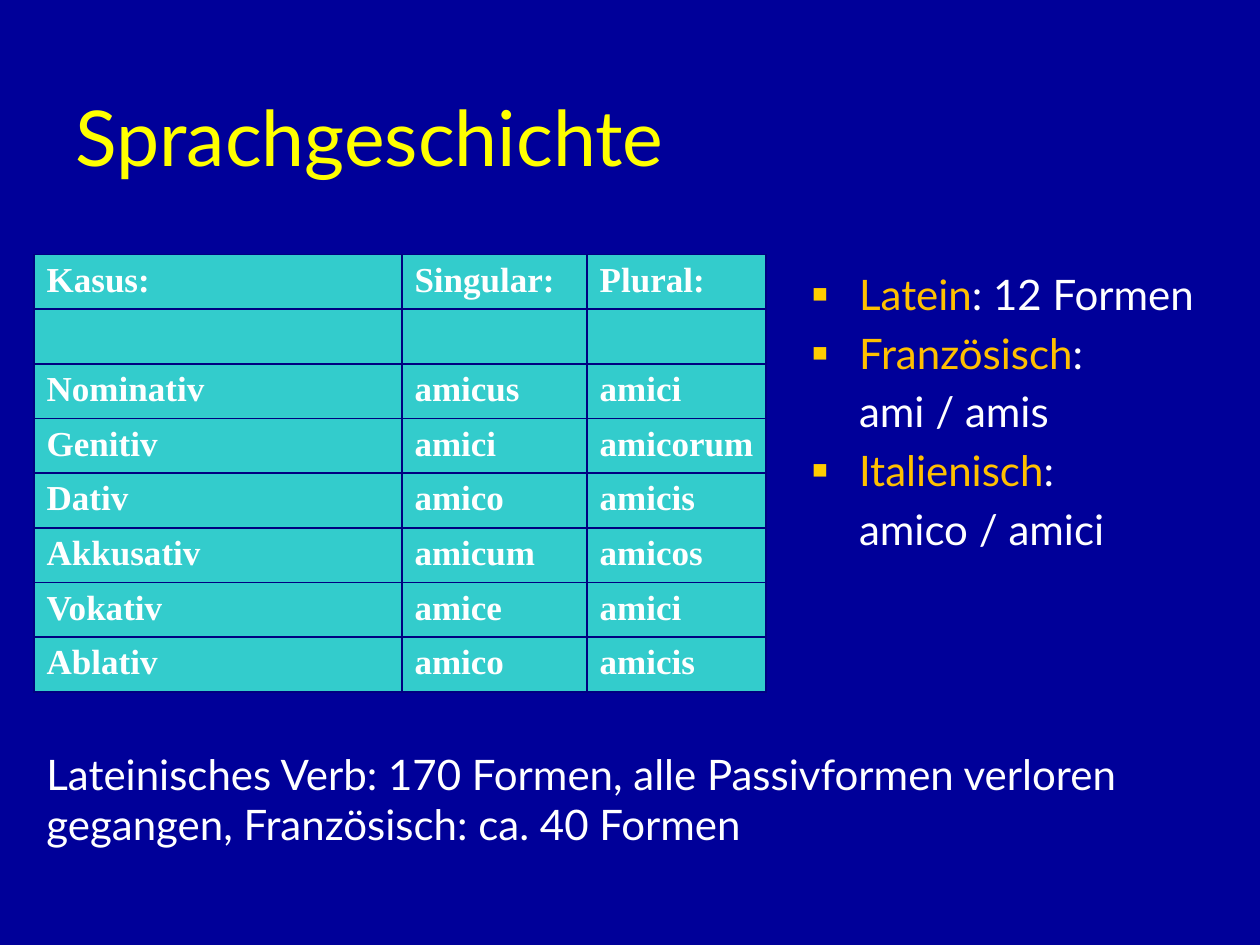
from dataclasses import dataclass

import pptx
import pptx.dml.color
import pptx.enum.text
import pptx.oxml.ns
import pptx.util
from lxml import etree

COLUMNS, ROWS = 100, 75


@dataclass(frozen=True)
class Theme:
    background: str = "000099"
    title: str = "FFFF00"
    text: str = "FFFFFF"
    language: str = "FFC000"
    bullet: str = "FFCC00"
    cell: str = "33CCCC"
    border: str = "000080"
    font: str = "Lato"
    table_font: str = "Times New Roman"
    bullet_font: str = "Times New Roman"
    title_size: int = 44
    text_size: int = 24
    table_size: int = 20
    border_width: int = 1


THEME = Theme()
HANGING_INDENT = pptx.util.Inches(0.38)
CELL_RIGHT_MARGIN = pptx.util.Inches(0.04)

DECLENSION = [
    ("Kasus:", "Singular:", "Plural:"),
    ("", "", ""),
    ("Nominativ", "amicus", "amici"),
    ("Genitiv", "amici", "amicorum"),
    ("Dativ", "amico", "amicis"),
    ("Akkusativ", "amicum", "amicos"),
    ("Vokativ", "amice", "amici"),
    ("Ablativ", "amico", "amicis"),
]
CASE_COLUMN_SHARES = (2.92, 1.47, 1.42)

# Language, what follows it on the line, and the forms on the next line
LANGUAGES = [
    ("Latein", ": 12 Formen", None),
    ("Französisch", ":", "ami / amis"),
    ("Italienisch", ":", "amico / amici"),
]
VERB_NOTE = ("Lateinisches Verb: 170 Formen, alle Passivformen verloren "
             "gegangen, Französisch: ca. 40 Formen")


def rgb(value):
    return pptx.dml.color.RGBColor.from_string(value)


def grid_box(presentation, left, top, width, height):
    """Turn grid columns and rows into slide lengths."""
    column = presentation.slide_width / COLUMNS
    row = presentation.slide_height / ROWS
    return (round(left * column), round(top * row),
            round(width * column), round(height * row))


def add_run(paragraph, text, color, size=THEME.text_size, font=THEME.font, bold=False):
    run = paragraph.add_run()
    run.text = text
    run.font.name = font
    run.font.size = pptx.util.Pt(size)
    run.font.bold = bold
    run.font.color.rgb = rgb(color)


def add_text_frame(slide, box):
    frame = slide.shapes.add_textbox(*box).text_frame
    frame.word_wrap = True
    return frame


def add_child(parent, tag, **attributes):
    child = etree.SubElement(parent, pptx.oxml.ns.qn(tag))
    for name, value in attributes.items():
        child.set(name, str(value))
    return child


def indent_paragraph(paragraph, bulleted):
    properties = paragraph._p.get_or_add_pPr()
    properties.set("marL", str(HANGING_INDENT))
    properties.set("indent", str(-HANGING_INDENT if bulleted else 0))
    if bulleted:
        color = add_child(properties, "a:buClr")
        add_child(color, "a:srgbClr", val=THEME.bullet)
        add_child(properties, "a:buSzPct", val=120000)
        add_child(properties, "a:buFont", typeface=THEME.bullet_font)
        add_child(properties, "a:buChar", char="▪")


def style_cell(cell):
    properties = cell._tc.get_or_add_tcPr()
    for side in ("a:lnL", "a:lnR", "a:lnT", "a:lnB"):
        line = add_child(properties, side, w=pptx.util.Pt(THEME.border_width))
        fill = add_child(line, "a:solidFill")
        add_child(fill, "a:srgbClr", val=THEME.border)
    cell.fill.solid()
    cell.fill.fore_color.rgb = rgb(THEME.cell)
    cell.margin_right = CELL_RIGHT_MARGIN


def add_title(slide, box):
    frame = add_text_frame(slide, box)
    frame.vertical_anchor = pptx.enum.text.MSO_ANCHOR.MIDDLE
    add_run(frame.paragraphs[0], "Sprachgeschichte", THEME.title, THEME.title_size)


def add_declension_table(slide, box):
    table = slide.shapes.add_table(len(DECLENSION), len(CASE_COLUMN_SHARES), *box).table
    table.first_row = table.horz_banding = False
    for column, share in zip(table.columns, CASE_COLUMN_SHARES):
        column.width = round(box[2] * share / sum(CASE_COLUMN_SHARES))
    for row, words in zip(table.rows, DECLENSION):
        row.height = round(box[3] / len(DECLENSION))
        for cell, word in zip(row.cells, words):
            style_cell(cell)
            if word:
                add_run(cell.text_frame.paragraphs[0], word, THEME.text,
                        THEME.table_size, THEME.table_font, bold=True)


def add_language_list(slide, box):
    frame = add_text_frame(slide, box)

    def next_paragraph(bulleted):
        paragraph = frame.paragraphs[0]
        if paragraph.runs:
            paragraph = frame.add_paragraph()
            paragraph.space_before = pptx.util.Pt(THEME.text_size * 0.2)
        indent_paragraph(paragraph, bulleted)
        return paragraph

    for language, remainder, forms in LANGUAGES:
        paragraph = next_paragraph(bulleted=True)
        add_run(paragraph, language, THEME.language)
        add_run(paragraph, remainder, THEME.text)
        if forms:
            add_run(next_paragraph(bulleted=False), forms, THEME.text)


def add_verb_note(slide, box):
    frame = add_text_frame(slide, box)
    add_run(frame.paragraphs[0], VERB_NOTE, THEME.text)


def main():
    presentation = pptx.Presentation()
    presentation.slide_width = pptx.util.Inches(10)
    presentation.slide_height = pptx.util.Inches(7.5)
    slide = presentation.slides.add_slide(presentation.slide_layouts[6])
    slide.background.fill.solid()
    slide.background.fill.fore_color.rgb = rgb(THEME.background)

    add_title(slide, grid_box(presentation, 5, 3.2, 90, 15.1))
    add_declension_table(slide, grid_box(presentation, 2.7, 20.2, 58.1, 34.7))
    add_language_list(slide, grid_box(presentation, 63.4, 20.8, 36.6, 45))
    add_verb_note(slide, grid_box(presentation, 2.7, 58.9, 97.3, 9.1))
    presentation.save("out.pptx")


if __name__ == "__main__":
    main()
